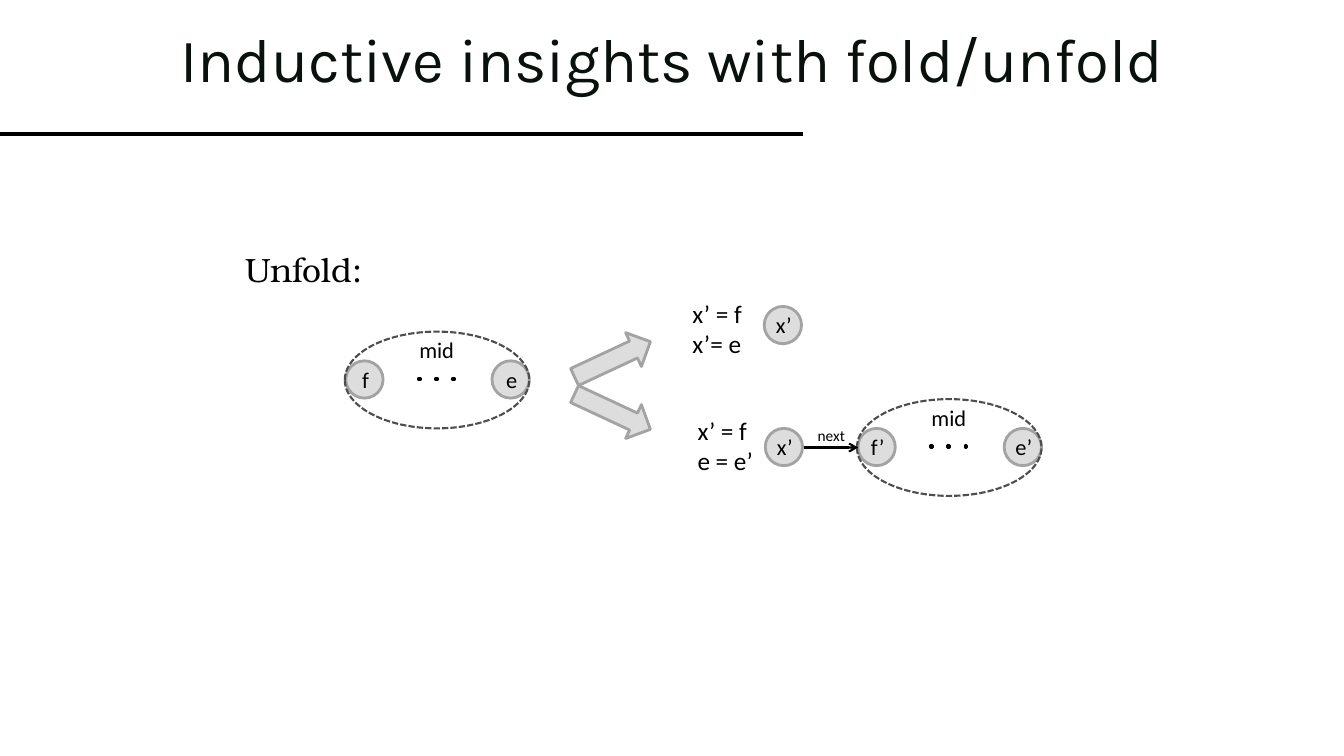
from lxml import etree
from pptx import Presentation
from pptx.dml.color import RGBColor
from pptx.enum.dml import MSO_LINE
from pptx.enum.shapes import MSO_CONNECTOR, MSO_SHAPE
from pptx.enum.text import MSO_ANCHOR, MSO_AUTO_SIZE, PP_ALIGN
from pptx.oxml.ns import qn
from pptx.util import Inches, Pt

OVAL, RECT, ARROW = MSO_SHAPE.OVAL, MSO_SHAPE.RECTANGLE, MSO_SHAPE.RIGHT_ARROW
STRAIGHT = MSO_CONNECTOR.STRAIGHT
DASH = MSO_LINE.SQUARE_DOT
MIDDLE, TOP = MSO_ANCHOR.MIDDLE, MSO_ANCHOR.TOP
CENTER, LEFT = PP_ALIGN.CENTER, PP_ALIGN.LEFT
NO_FIT, GROW = MSO_AUTO_SIZE.NONE, MSO_AUTO_SIZE.SHAPE_TO_FIT_TEXT

BLACK, GREY, EDGE, OUTLINE = "000000", "DDDDDD", "A3A3A3", "4D4D4D"
NODE = 0.37


def rgb(value):
    return RGBColor.from_string(value)


def write(tf, lines, size, font="Calibri", color=BLACK, align=LEFT, spacing=None, **frame):
    for name, value in frame.items():
        setattr(tf, name, value)
    for i, line in enumerate(lines):
        p = tf.add_paragraph() if i else tf.paragraphs[0]
        p.alignment = align
        if spacing:
            p.line_spacing = spacing
        r = p.add_run()
        r.text = line
        r.font.name, r.font.size = font, Pt(size)
        r.font.color.rgb = rgb(color)


def add_label(slide, x, y, w, h, lines, size, font="Calibri"):
    sp = slide.shapes.add_textbox(Inches(x), Inches(y), Inches(w), Inches(h))
    write(sp.text_frame, lines, size, font, word_wrap=False, auto_size=GROW,
          vertical_anchor=TOP)


def add_figure(shapes, kind, x, y, w, h, fill=GREY, line=EDGE, width=2):
    sp = shapes.add_shape(kind, Inches(x), Inches(y), Inches(w), Inches(h))
    sp.shadow.inherit = False
    if fill:
        sp.fill.solid()
        sp.fill.fore_color.rgb = rgb(fill)
    else:
        sp.fill.background()
    sp.line.color.rgb = rgb(line)
    sp.line.width = Pt(width)
    return sp


def add_node(slide, x, y, name):
    sp = add_figure(slide.shapes, OVAL, x, y, NODE, NODE)
    write(sp.text_frame, [name], 16, align=CENTER, vertical_anchor=MIDDLE,
          margin_left=Inches(0.02), margin_right=0)


def add_line(slide, x1, x2, y, width, arrow=False):
    cn = slide.shapes.add_connector(STRAIGHT, Inches(x1), Inches(y), Inches(x2), Inches(y))
    cn.line.color.rgb = rgb(BLACK)
    cn.line.width = Pt(width)
    if arrow:
        etree.SubElement(cn.line._get_or_add_ln(), qn("a:tailEnd"), type="arrow")
    etree.SubElement(cn._element.spPr, qn("a:effectLst"))


def add_segment(slide, x, y, first, end):
    """A dashed list segment: first node, dots for the middle, end node."""
    add_node(slide, x + 0.01, y + 0.29, first)
    add_node(slide, x + 1.46, y + 0.29, end)
    dots = slide.shapes.add_group_shape()
    for i in range(3):
        add_figure(dots.shapes, RECT, x + 0.73 + 0.17 * i, y + 0.46, 0.02, 0.02, BLACK, BLACK)
    add_label(slide, x + 0.64, y, 0.55, 0.37, ["mid"], 16)
    sp = add_figure(slide.shapes, OVAL, x, y, 1.83, 0.96, None, OUTLINE, 1.5)
    sp.line.dash_style = DASH


def add_title(slide, text):
    sp = slide.shapes.title
    sp.left, sp.top, sp.width, sp.height = map(Inches, (1.69, 0, 9.97, 1.25))
    write(sp.text_frame, [text], 44, "Karla", "08110B", spacing=0.9,
          vertical_anchor=MIDDLE, word_wrap=True, auto_size=NO_FIT)


def main():
    prs = Presentation()
    prs.slide_width, prs.slide_height = Inches(13.33), Inches(7.5)
    slide = prs.slides.add_slide(prs.slide_layouts[5])

    # Heading
    add_line(slide, 0, 7.96, 1.33, 2.25)
    add_title(slide, "Inductive insights with fold/unfold")
    add_label(slide, 2.33, 2.42, 1.4, 0.5, ["Unfold:"], 24, "TeX Gyre Bonum")

    # Folded segment and the two ways to unfold it
    add_segment(slide, 3.42, 3.29, "f", "e")
    for y, angle in ((3.9, 25), (3.38, 335)):
        add_figure(slide.shapes, ARROW, 5.66, y, 0.83, NODE).rotation = angle

    # Single node
    add_label(slide, 6.77, 2.91, 0.76, 0.71, ["x’ = f", "x’= e"], 18)
    add_node(slide, 7.58, 3.04, "x’")

    # Node followed by a segment
    add_label(slide, 6.82, 4.07, 0.76, 0.71, ["x’ = f", "e = e’"], 18)
    add_segment(slide, 8.5, 3.96, "f’", "e’")
    add_node(slide, 7.59, 4.25, "x’")
    add_line(slide, 7.97, 8.51, 4.44, 1.5, arrow=True)
    add_label(slide, 8.01, 4.18, 0.48, 0.29, ["next"], 11)

    prs.save("out.pptx")


if __name__ == "__main__":
    main()
